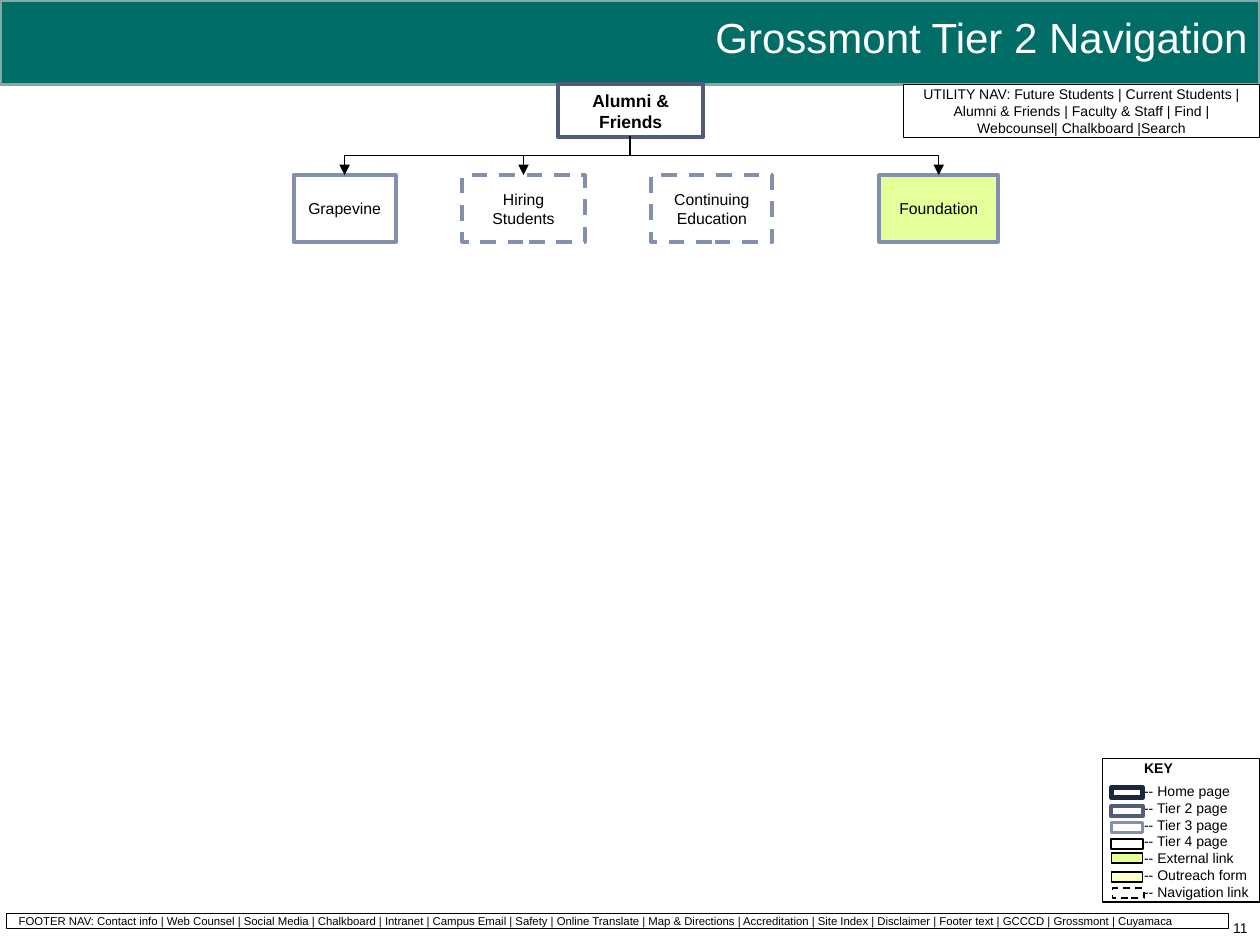
from lxml.etree import SubElement
from pptx import Presentation
from pptx.dml.color import RGBColor
from pptx.enum.dml import MSO_LINE
from pptx.enum.shapes import MSO_CONNECTOR, MSO_SHAPE
from pptx.enum.text import MSO_ANCHOR, PP_ALIGN
from pptx.oxml.ns import qn
from pptx.util import Inches, Pt

COLORS = {
    "banner": "006D67",
    "banner_edge": "8AA6A8",
    "white": "FFFFFF",
    "black": "000000",
    "home": "1B263F",
    "tier2": "525B78",
    "tier3": "8390AD",
    "external": "E5FF9B",
    "form": "FFFFCC",
}

presentation = Presentation()
presentation.slide_width = Inches(10)
presentation.slide_height = Inches(7.5)
slide = presentation.slides.add_slide(presentation.slide_layouts[6])


def write(shape, text, size, color="black", bold=False, align=PP_ALIGN.LEFT, anchor=MSO_ANCHOR.MIDDLE):
    frame = shape.text_frame
    frame.word_wrap = True
    frame.vertical_anchor = anchor
    frame.text = text
    for paragraph in frame.paragraphs:
        paragraph.alignment = align
        paragraph.font.name = "Arial"
        paragraph.font.size = Pt(size)
        paragraph.font.bold = bold
        paragraph.font.color.rgb = RGBColor.from_string(COLORS[color])


def add_box(left, top, width, height, fill, line, line_width, dashed=False):
    shape = slide.shapes.add_shape(
        MSO_SHAPE.RECTANGLE, Inches(left), Inches(top), Inches(width), Inches(height))
    shape.shadow.inherit = False
    if fill:
        shape.fill.solid()
        shape.fill.fore_color.rgb = RGBColor.from_string(COLORS[fill])
    else:
        shape.fill.background()
    shape.line.color.rgb = RGBColor.from_string(COLORS[line])
    shape.line.width = Pt(line_width)
    if dashed:
        shape.line.dash_style = MSO_LINE.DASH
    return shape


add_box(0, 0, 10, 0.67, "banner", "banner_edge", 2)

utility = add_box(7.17, 0.67, 2.83, 0.42, "white", "black", 0.75)
write(utility, "UTILITY NAV: Future Students | Current Students | Alumni & Friends | "
      "Faculty & Staff | Find | Webcounsel| Chalkboard |Search", 8, align=PP_ALIGN.CENTER)

footer = add_box(0.05, 7.25, 9.7, 0.12, "white", "black", 0.75)
write(footer, "FOOTER NAV: Contact info | Web Counsel | Social Media | Chalkboard | Intranet | "
      "Campus Email | Safety | Online Translate | Map & Directions | Accreditation | Site Index | "
      "Disclaimer | Footer text | GCCCD | Grossmont | Cuyamaca", 6.5)

key_entries = [
    ("Home page", 8.82, 6.25, "white", "home", 3, False),
    ("Tier 2 page", 8.82, 6.4, "white", "tier2", 2.25, False),
    ("Tier 3 page", 8.82, 6.53, "white", "tier3", 1.5, False),
    ("Tier 4 page", 8.82, 6.66, "white", "black", 1, False),
    ("External link", 8.82, 6.77, "external", "black", 0.75, False),
    ("Outreach form", 8.82, 6.92, "form", "black", 0.75, False),
    ("Navigation link", 8.83, 7.05, "white", "black", 1, True),
]
key = slide.shapes.add_textbox(Inches(9.08), Inches(6.03), Inches(0.92), Inches(1.13))
key_frame = key.text_frame
key_frame.margin_left = key_frame.margin_right = 0
key_frame.margin_top = key_frame.margin_bottom = 0
key_labels = "\v".join(f"-- {entry[0]}" for entry in key_entries)
write(key, f"KEY\n{key_labels}", 8, anchor=MSO_ANCHOR.TOP)
key_frame.paragraphs[0].font.bold = True
for paragraph in key_frame.paragraphs:
    paragraph.space_after = Pt(3.5)

add_box(8.75, 6.02, 1.25, 1.14, None, "black", 0.75)
for label, left, top, fill, line, line_width, dashed in key_entries:
    add_box(left, top, 0.25, 0.08, fill, line, line_width, dashed)

page_number = slide.shapes.add_textbox(Inches(7.67), Inches(7.25), Inches(2.33), Inches(0.25))
write(page_number, "11", 8, align=PP_ALIGN.RIGHT, anchor=MSO_ANCHOR.TOP)

title = slide.shapes.add_textbox(Inches(4.25), Inches(0), Inches(5.75), Inches(0.58))
write(title, "Grossmont Tier 2 Navigation", 24, "white", align=PP_ALIGN.RIGHT)

section = add_box(4.43, 0.67, 1.15, 0.42, "white", "tier2", 2.25)
write(section, "Alumni & Friends", 10, bold=True, align=PP_ALIGN.CENTER)

section_center, section_bottom, page_top = 5, 1.08, 1.39
pages = [
    ("Grapevine", 2.33, 0.81, "white", False, True),
    ("Hiring Students", 3.67, 0.97, "white", True, True),
    ("Continuing Education", 5.17, 0.96, "white", True, False),
    ("Foundation", 6.98, 0.94, "external", False, True),
]
for name, left, width, fill, dashed, linked in pages:
    page = add_box(left, page_top, width, 0.53, fill, "tier3", 2.25, dashed)
    write(page, name, 9, align=PP_ALIGN.CENTER)
    if not linked:
        continue
    page_center = left + width / 2
    middle_x = (section_center + page_center) / 2
    middle_y = (section_bottom + page_top) / 2
    half_drop = (page_top - section_bottom) / 2
    half_span = abs(page_center - section_center) / 2
    goes_right = page_center > section_center
    side = 1 if goes_right else -1
    connector = slide.shapes.add_connector(
        MSO_CONNECTOR.ELBOW,
        Inches(middle_x + side * half_drop), Inches(middle_y - half_span),
        Inches(middle_x - side * half_drop), Inches(middle_y + half_span))
    connector.line.color.rgb = RGBColor.from_string(COLORS["black"])
    connector.line.width = Pt(0.75)
    properties = connector._element.spPr
    properties.find(qn("a:xfrm")).set("rot", "16200000" if goes_right else "5400000")
    SubElement(properties.find(qn("a:ln")), qn("a:tailEnd"), type="triangle")
    SubElement(properties, qn("a:effectLst"))

presentation.save("out.pptx")
